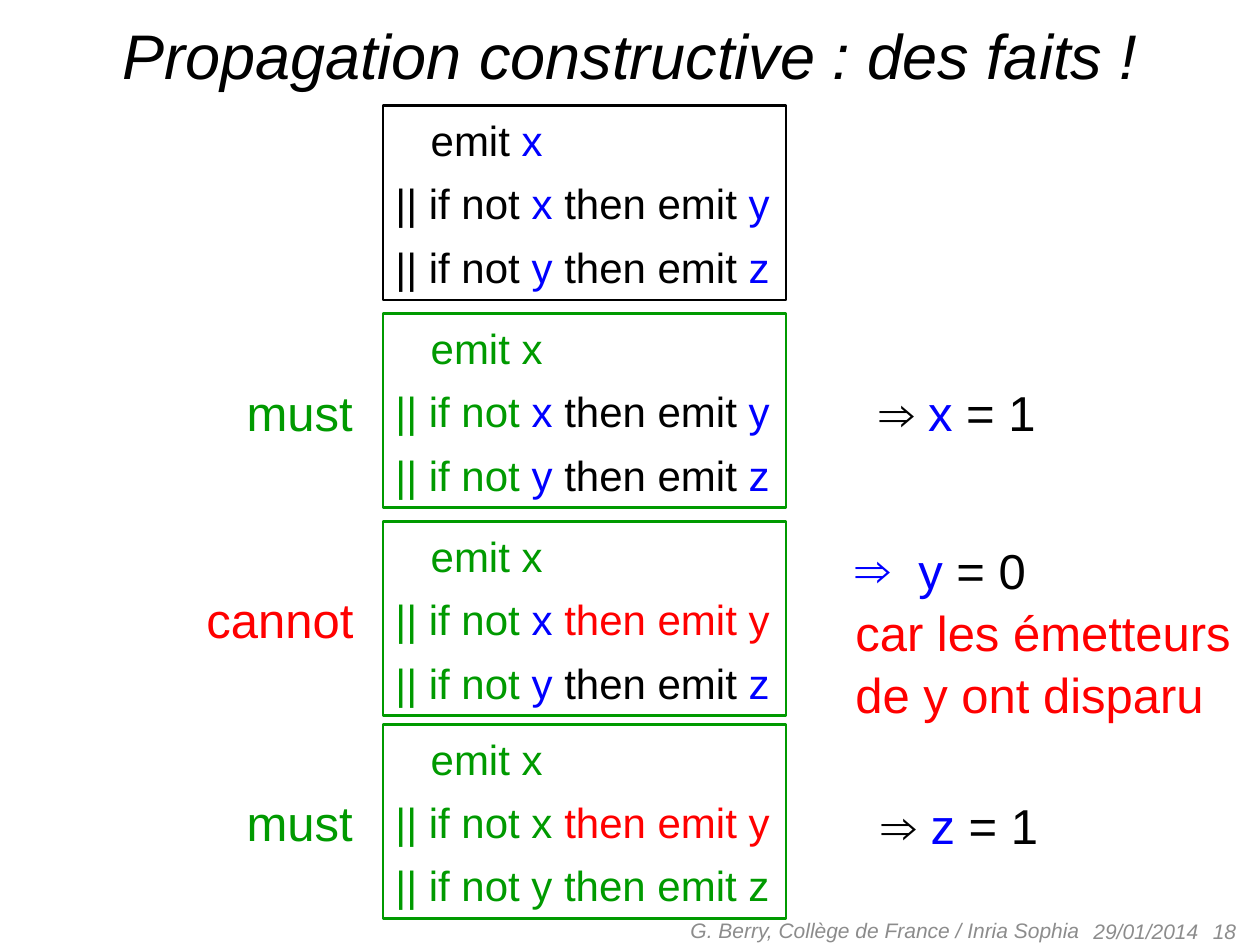
from lxml import etree
from pptx import Presentation
from pptx.dml.color import RGBColor
from pptx.enum.shapes import MSO_SHAPE
from pptx.enum.text import MSO_ANCHOR, MSO_AUTO_SIZE, PP_ALIGN
from pptx.oxml.ns import qn
from pptx.util import Inches, Pt

LEFT, CENTER, RIGHT = PP_ALIGN.LEFT, PP_ALIGN.CENTER, PP_ALIGN.RIGHT
TOP, MIDDLE = MSO_ANCHOR.TOP, MSO_ANCHOR.MIDDLE
GROW, FIXED = MSO_AUTO_SIZE.SHAPE_TO_FIT_TEXT, MSO_AUTO_SIZE.NONE
RECTANGLE = MSO_SHAPE.RECTANGLE

BLACK, BLUE, GREEN, RED, GRAY = "000000", "0000FF", "009A00", "FF0000", "8C8C8C"

CODE_LEFT, CODE_WIDTH, CODE_HEIGHT = 3.04, 3.2, 1.54
FIRST_TOP, STEP = 0.84, 1.65
LABEL_HEIGHT = 0.6
HANGING = (0.22, -0.22)
EMIT_INDENT = (0.28, 0)
BULLET_INDENT = (0.5, -0.5)

PLAIN_Y = [("|| if not ", BLACK), ("x", BLUE), (" then emit ", BLACK), ("y", BLUE)]
PLAIN_Z = [("|| if not ", BLACK), ("y", BLUE), (" then emit ", BLACK), ("z", BLUE)]
MUST_X = [("emit x", GREEN)]
MUST_Y = [("|| if not ", GREEN)] + PLAIN_Y[1:]
MUST_Z = [("|| if not ", GREEN)] + PLAIN_Z[1:]
CANNOT_Y = [("|| if not ", GREEN), ("x ", BLUE), ("then emit y", RED)]

PROGRAM = [[("emit ", BLACK), ("x", BLUE)], PLAIN_Y, PLAIN_Z]
STEPS = [
    (2.49, ("must", GREEN, 1.86, 1.05), [MUST_X, MUST_Y, MUST_Z]),
    (4.14, ("cannot", RED, 1.54, 1.38), [MUST_X, CANNOT_Y, MUST_Z]),
    (5.75, ("must", GREEN, 1.86, 1.05), [
        MUST_X,
        [("|| if not x ", GREEN), ("then emit y", RED)],
        [("|| if not y then emit z", GREEN)],
    ]),
]
FACTS = [("x", (6.88, 2.96, 1.66, 0.6)), ("z", (6.9, 6.24, 1.66, 0.56))]
FOOTERS = [
    ("29/01/2014", (8.58, 7.19, 2.33, 0.4), LEFT),
    ("18", (7.58, 7.19, 2.33, 0.4), RIGHT),
    ("G. Berry, Collège de France / Inria Sophia", (4.61, 7.18, 4.06, 0.4), RIGHT),
]


def color(value):
    return RGBColor.from_string(value)


def apply(target, values):
    for name, value in values.items():
        setattr(target, name, value)


def text_box(slide, box):
    return slide.shapes.add_textbox(*map(Inches, box))


def write(shape, lines, size, indents, align=LEFT, anchor=TOP, wrap=False,
          grow=GROW, before=0, spacing=1.05, italic=False):
    frame = shape.text_frame
    apply(frame, {"word_wrap": wrap, "auto_size": grow, "vertical_anchor": anchor})
    for index, (line, (margin, indent)) in enumerate(zip(lines, indents)):
        paragraph = frame.add_paragraph() if index else frame.paragraphs[0]
        apply(paragraph, {"alignment": align, "line_spacing": spacing,
                          "space_before": Pt(before)})
        properties = paragraph._p.get_or_add_pPr()
        properties.set("marL", str(Inches(margin)))
        properties.set("indent", str(Inches(indent)))
        for words, tint in line:
            run = paragraph.add_run()
            run.text = words
            apply(run.font, {"name": "Arial", "size": Pt(size), "italic": italic})
            run.font.color.rgb = color(tint)


def add_title(slide, box):
    write(text_box(slide, box), [[("Propagation constructive : des faits !", BLACK)]],
          36, [(0, 0)], align=CENTER, wrap=True, italic=True)


def add_footer(slide, words, box, align):
    write(text_box(slide, box), [[(words, GRAY)]], 12, [(0, 0)], align=align,
          anchor=MIDDLE, wrap=True, grow=FIXED, spacing=1.0, italic=True)


def add_code(slide, top, lines, outline):
    box = (CODE_LEFT, top, CODE_WIDTH, CODE_HEIGHT)
    code = slide.shapes.add_shape(RECTANGLE, *map(Inches, box))
    code.shadow.inherit = False
    code.fill.background()
    code.line.color.rgb = color(outline)
    code.line.width = Pt(1.5)
    write(code, lines, 24, [EMIT_INDENT, HANGING, HANGING], before=6)


def add_step(slide, top, label, lines):
    words, tint, left, width = label
    label_top = top + (CODE_HEIGHT - LABEL_HEIGHT) / 2
    write(text_box(slide, (left, label_top, width, LABEL_HEIGHT)),
          [[(words, tint)]], 28, [HANGING], before=6)
    add_code(slide, top, lines, GREEN)


def add_fact(slide, signal, box):
    write(text_box(slide, box),
          [[("⇒ ", BLACK), (signal, BLUE), (" = 1", BLACK)]], 28, [HANGING])


def add_explanation(slide, box):
    explanation = text_box(slide, box)
    lines = [[("y", BLUE), (" = 0", BLACK)],
             [("car les émetteurs", RED)],
             [("de y ont disparu", RED)]]
    write(explanation, lines, 28, [BULLET_INDENT, (0, 0), (0, 0)])
    properties = explanation.text_frame.paragraphs[0]._p.get_or_add_pPr()
    etree.SubElement(properties, qn("a:buFont")).set("typeface", "Arial")
    etree.SubElement(properties, qn("a:buChar")).set("char", "⇒")


def main():
    deck = Presentation()
    apply(deck, {"slide_width": Inches(10), "slide_height": Inches(7.5)})
    slide = deck.slides.add_slide(deck.slide_layouts[6])
    for footer in FOOTERS:
        add_footer(slide, *footer)
    add_title(slide, (0.25, 0.05, 9.5, 0.71))
    add_code(slide, FIRST_TOP, PROGRAM, BLACK)
    for step in STEPS:
        add_step(slide, *step)
    for fact in FACTS:
        add_fact(slide, *fact)
    add_explanation(slide, (6.69, 4.22, 3.22, 1.59))
    deck.save("out.pptx")


if __name__ == "__main__":
    main()
